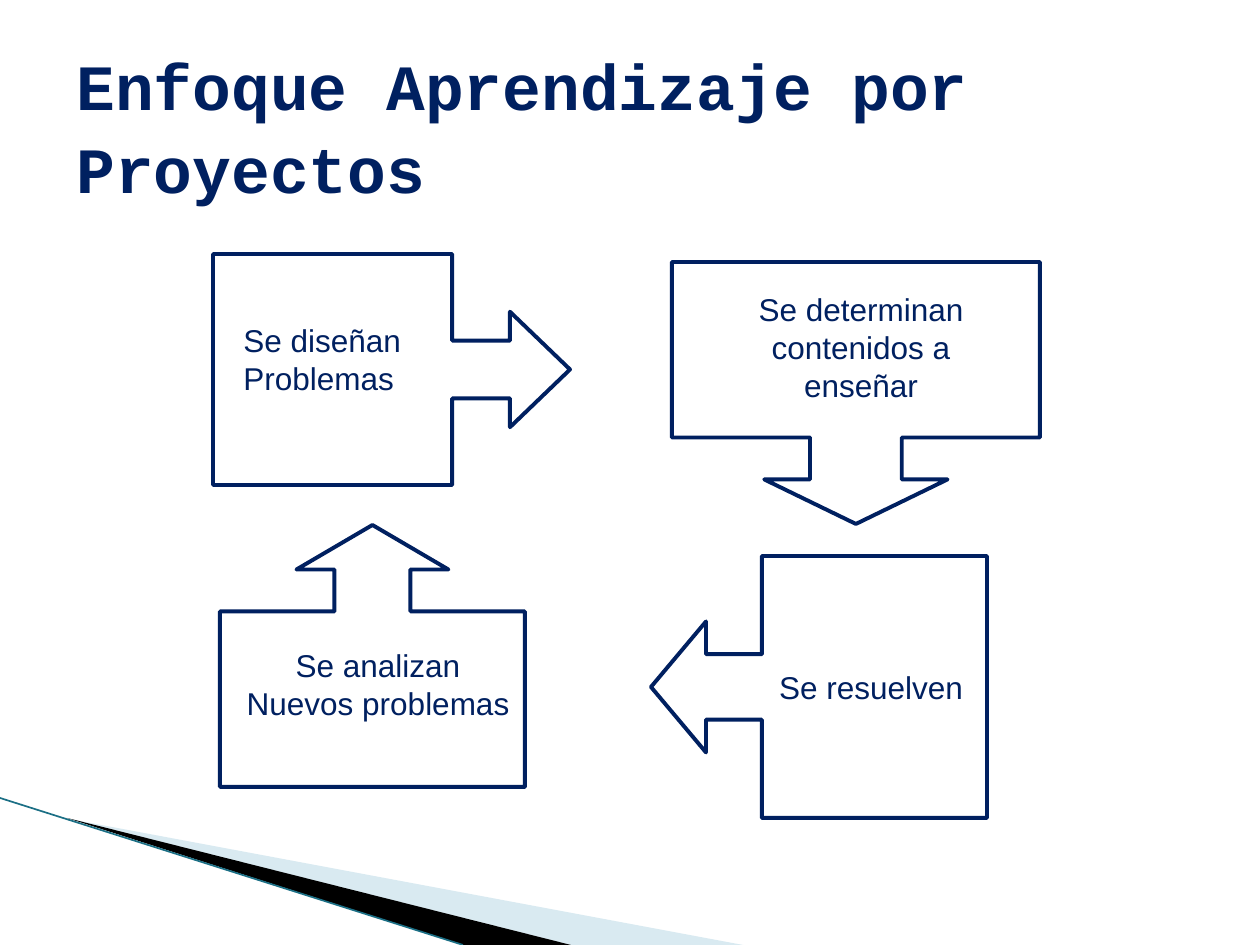
import lxml.etree
import pptx
import pptx.dml.color
import pptx.enum.shapes
import pptx.enum.text
import pptx.oxml.ns
import pptx.util

PX = 914400 // 126
COLORS = {"navy": "002060", "pale": "D9EAF1", "black": "000000", "teal": "1B6F85"}
SHAPES = pptx.enum.shapes.MSO_SHAPE
ALIGN = pptx.enum.text.PP_ALIGN


def px(length):
    """Turn pixels into EMU."""
    return pptx.util.Emu(length * PX)


def rgb(name):
    """Look up a named colour."""
    return pptx.dml.color.RGBColor.from_string(COLORS[name])


def add_text(slide, box, lines, size=18, font="Arial", bold=False,
             align=ALIGN.CENTER, anchor=pptx.enum.text.MSO_ANCHOR.TOP,
             spacing=None, inset_top=6):
    """Add a wrapped text box with one paragraph per line."""
    frame = slide.shapes.add_textbox(*map(px, box)).text_frame
    frame.word_wrap = True
    frame.vertical_anchor = anchor
    frame.margin_top = px(inset_top)
    frame.text = "\n".join(lines)
    for paragraph in frame.paragraphs:
        paragraph.alignment = align
        paragraph.line_spacing = spacing
        for run in paragraph.runs:
            run.font.size = pptx.util.Pt(size)
            run.font.name = font
            run.font.bold = bold
            run.font.color.rgb = rgb("navy")


def add_callout(slide, kind, box, adjustments):
    """Add an outlined arrow callout."""
    callout = slide.shapes.add_shape(kind, *map(px, box))
    callout.shadow.inherit = False
    callout.fill.background()
    callout.line.color.rgb = rgb("navy")
    callout.line.width = pptx.util.Pt(2.25)
    for index, value in enumerate(adjustments):
        callout.adjustments[index] = value


def add_wedge(slide, points, color):
    """Add a filled polygon without an outline."""
    builder = slide.shapes.build_freeform(*points[0], scale=PX)
    builder.add_line_segments(points[1:], close=True)
    wedge = builder.convert_to_shape()
    wedge.shadow.inherit = False
    wedge.fill.solid()
    wedge.fill.fore_color.rgb = rgb(color)
    wedge.line.fill.background()


def add_edge(slide, start, end, color):
    """Add a thin straight line."""
    edge = slide.shapes.add_connector(
        pptx.enum.shapes.MSO_CONNECTOR.STRAIGHT, *map(px, start + end))
    edge.line.color.rgb = rgb(color)
    edge.line.width = pptx.util.Pt(0.95)
    lxml.etree.SubElement(edge._element.spPr, pptx.oxml.ns.qn("a:effectLst"))


def main():
    """Build the project-based learning cycle slide."""
    deck = pptx.Presentation()
    deck.slide_width, deck.slide_height = px(1260), px(945)
    slide = deck.slides.add_slide(deck.slide_layouts[6])

    add_wedge(slide, [(69, 819), (743, 945), (571, 945)], "pale")
    add_wedge(slide, [(67, 818), (571, 945), (463, 945)], "black")
    add_edge(slide, (0, 798), (463, 945), "teal")

    add_text(slide, (64, 38, 1131, 157), ["Enfoque Aprendizaje por Proyectos"],
             size=36.9, font="Courier New", bold=True, align=ALIGN.LEFT,
             anchor=pptx.enum.text.MSO_ANCHOR.MIDDLE, spacing=1.07, inset_top=20)

    steps = [
        (SHAPES.RIGHT_ARROW_CALLOUT, (213, 254, 357, 231), (0.25, 0.25, 0.26, 0.67),
         (231, 315, 199, 88), ["Se diseñan", "Problemas"], ALIGN.LEFT),
        (SHAPES.DOWN_ARROW_CALLOUT, (672, 262, 368, 262), (0.35, 0.35, 0.17, 0.67),
         (714, 284, 294, 126), ["Se determinan contenidos a enseñar"], ALIGN.CENTER),
        (SHAPES.LEFT_ARROW_CALLOUT, (651, 556, 336, 262), (0.25, 0.25, 0.21, 0.67),
         (766, 662, 210, 50), ["Se resuelven"], ALIGN.CENTER),
        (SHAPES.UP_ARROW_CALLOUT, (220, 525, 305, 262), (0.29, 0.29, 0.17, 0.67),
         (231, 640, 294, 88), ["Se analizan", "Nuevos problemas"], ALIGN.CENTER),
    ]
    for kind, box, adjustments, label_box, lines, align in steps:
        add_callout(slide, kind, box, adjustments)
        add_text(slide, label_box, lines, align=align)

    deck.save("out.pptx")


if __name__ == "__main__":
    main()
